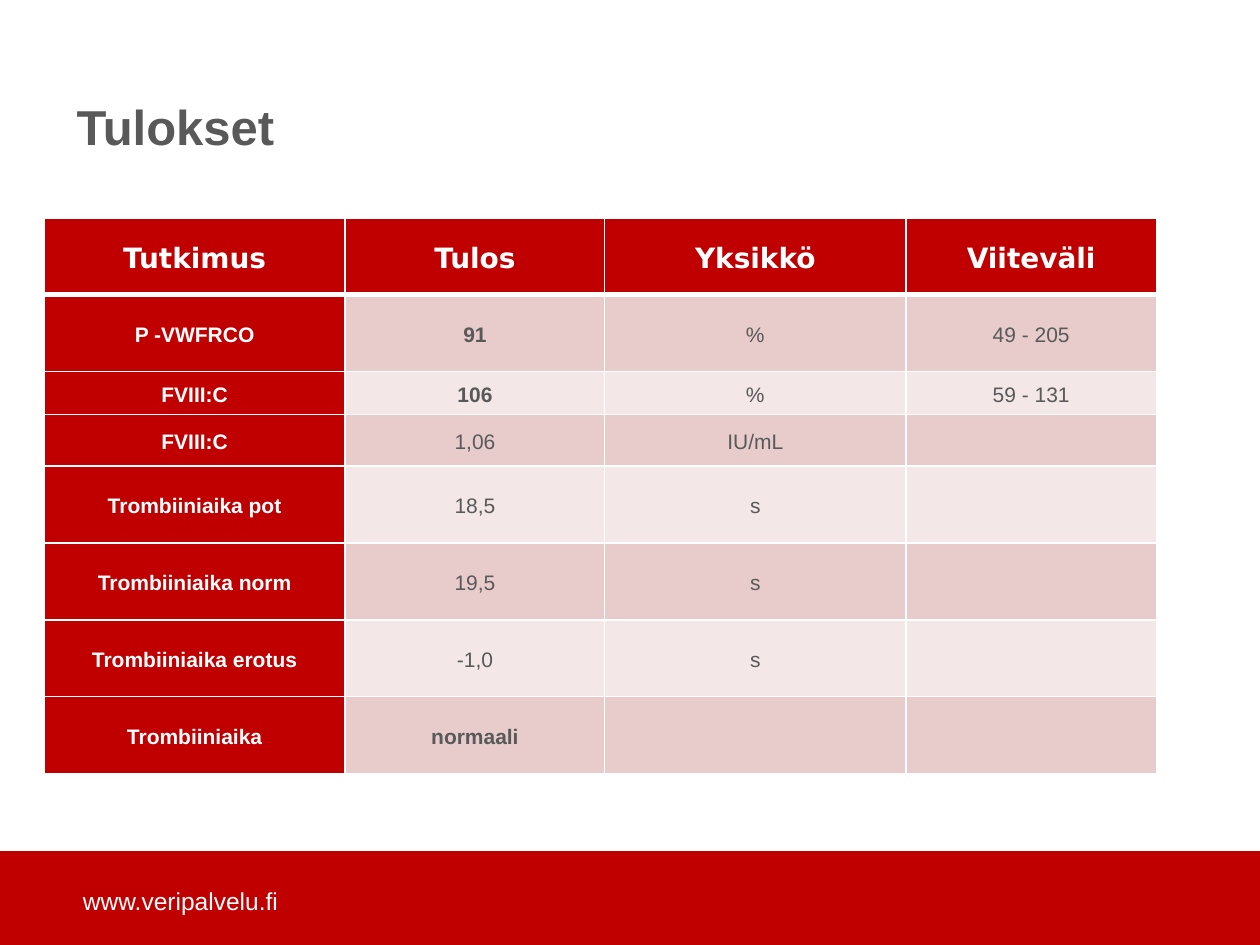
from pptx import Presentation
from pptx.dml.color import RGBColor
from pptx.enum.shapes import MSO_SHAPE
from pptx.enum.text import MSO_ANCHOR, PP_ALIGN
from pptx.oxml import parse_xml
from pptx.oxml.ns import nsdecls
from pptx.util import Inches, Pt

RED, GREY, WHITE = "C00000", "595959", "FFFFFF"
BANDS = ["E8CCCC", "F4E7E7"]
COLS = [2.39, 2.06, 2.39, 1.99]
HEIGHTS = [0.61, 0.61, 0.34, 0.41, 0.61, 0.61, 0.61, 0.61]
ROWS = [
    ["Tutkimus", "Tulos", "Yksikkö", "Viiteväli"],
    ["P -VWFRCO", "91", "%", "49 - 205"],
    ["FVIII:C", "106", "%", "59 - 131"],
    ["FVIII:C", "1,06", "IU/mL", ""],
    ["Trombiiniaika pot", "18,5", "s", ""],
    ["Trombiiniaika norm", "19,5", "s", ""],
    ["Trombiiniaika erotus", "-1,0", "s", ""],
    ["Trombiiniaika", "normaali", "", ""],
]
KEY = {"91", "106", "normaali"}


def color(code):
    return RGBColor.from_string(code)


def style(para, size, code, bold=False, face="Arial"):
    for run in para.runs:
        font = run.font
        font.name, font.size, font.bold = face, Pt(size), bold
        font.color.rgb = color(code)


def add_text(slide, box, text, anchor, size, code, bold=False):
    frame = slide.shapes.add_textbox(*map(Inches, box)).text_frame
    frame.word_wrap = True
    frame.vertical_anchor = anchor
    frame.text = text
    para = frame.paragraphs[0]
    style(para, size, code, bold)
    return para


def add_band(slide):
    band = slide.shapes.add_shape(
        MSO_SHAPE.RECTANGLE, 0, Inches(6.76), Inches(10), Inches(0.74))
    band.shadow.inherit = False
    band.fill.solid()
    band.fill.fore_color.rgb = color(RED)
    band.line.color.rgb = color(RED)
    band.line.width = Pt(1)


def set_edges(cell, top, bottom):
    """Draw white borders; call before the fill, which must follow them."""
    props = cell._tc.get_or_add_tcPr()
    for side, width in zip("LRTB", (1, 1, top, bottom)):
        props.append(parse_xml(
            f'<a:ln{side} {nsdecls("a")} w="{Pt(width)}"><a:solidFill>'
            f'<a:srgbClr val="{WHITE}"/></a:solidFill></a:ln{side}>'))


def fill_cell(cell, text, row, col):
    head = row == 0
    lead = head or col == 0
    set_edges(cell, 3 if row == 1 else 1, 3 if head else 1)
    cell.fill.solid()
    cell.fill.fore_color.rgb = color(RED if lead else BANDS[(row - 1) % 2])
    cell.vertical_anchor = MSO_ANCHOR.MIDDLE
    cell.margin_left = cell.margin_right = Inches(0.03)
    cell.margin_top = cell.margin_bottom = Inches(0.03)
    if not text:
        return
    cell.text_frame.text = text
    para = cell.text_frame.paragraphs[0]
    para.alignment = PP_ALIGN.CENTER
    para.line_spacing = 1.15
    style(para, 16 if head else 12, WHITE if lead else GREY,
          lead or text in KEY, "DejaVu Sans" if head else "Arial")


def add_results(slide):
    table = slide.shapes.add_table(
        len(ROWS), len(COLS), Inches(0.35), Inches(1.73),
        Inches(sum(COLS)), Inches(sum(HEIGHTS))).table
    for col, width in zip(table.columns, COLS):
        col.width = Inches(width)
    for row, height in zip(table.rows, HEIGHTS):
        row.height = Inches(height)
    for r, texts in enumerate(ROWS):
        for c, text in enumerate(texts):
            fill_cell(table.cell(r, c), text, r, c)


def main():
    deck = Presentation()
    deck.slide_width, deck.slide_height = Inches(10), Inches(7.5)
    slide = deck.slides.add_slide(deck.slide_layouts[6])
    add_band(slide)
    title = add_text(slide, (0.51, 0.31, 7.87, 0.98), "Tulokset",
                     MSO_ANCHOR.BOTTOM, 28, GREY, True)
    title.line_spacing = 0.9
    add_text(slide, (0.56, 6.95, 3.38, 0.4), "www.veripalvelu.fi",
             MSO_ANCHOR.MIDDLE, 14, WHITE)
    add_results(slide)
    deck.save("out.pptx")


if __name__ == "__main__":
    main()
